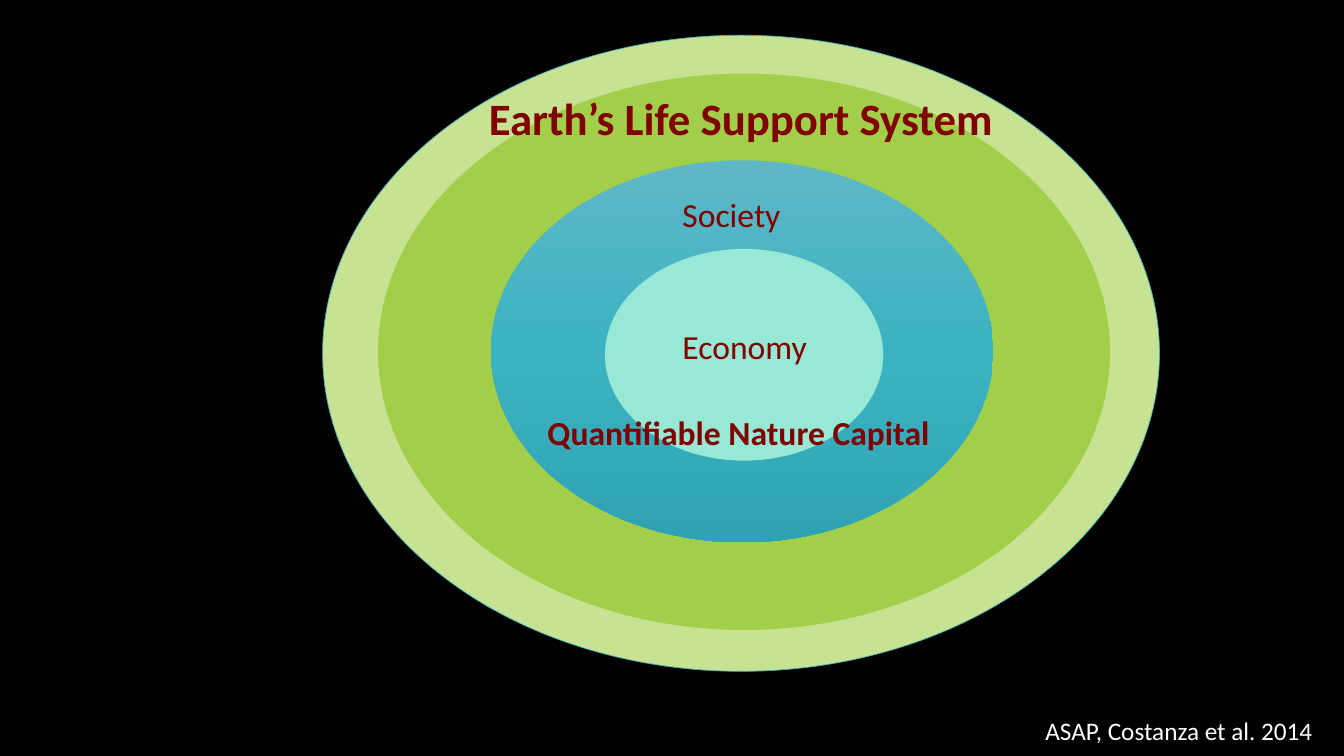
from copy import deepcopy

from pptx import Presentation
from pptx.dml.color import RGBColor
from pptx.enum import shapes, text
from pptx.util import Inches, Pt

BLACK = RGBColor(0x00, 0x00, 0x00)
WHITE = RGBColor(0xFF, 0xFF, 0xFF)
MAROON = RGBColor(0x80, 0x00, 0x00)
PALE_GREEN = RGBColor(0xC7, 0xE2, 0x92)
GREEN = RGBColor(0xA2, 0xCF, 0x49)
MINT = RGBColor(0x97, 0xE9, 0xD5)
TEAL = RGBColor(0x41, 0xAE, 0xBD)
SOCIETY_BLUES = [
    RGBColor(0x5F, 0xB7, 0xC5),
    RGBColor(0x3B, 0xB3, 0xC3),
    RGBColor(0x2F, 0xA3, 0xB3),
]


def add_ellipse(s, box, color):
    sp = s.shapes.add_shape(shapes.MSO_SHAPE.OVAL, *map(Inches, box))
    sp.shadow.inherit = False
    sp.fill.solid()
    sp.fill.fore_color.rgb = color
    sp.line.fill.background()
    return sp


def set_gradient(sp, colors):
    sp.fill.gradient()
    sp.fill.gradient_angle = 270
    stop_list = sp.element.xpath(".//a:gsLst")[0]
    while len(stop_list) < len(colors):
        stop_list.append(deepcopy(stop_list[0]))
    for i, (stop, color) in enumerate(zip(sp.fill.gradient_stops, colors)):
        stop.position = i / (len(colors) - 1)
        stop.color.rgb = color


def format_label(sp, words, size, color=MAROON, bold=False, centered=False):
    tf = sp.text_frame
    tf.text = words
    tf.word_wrap = True
    tf.auto_size = text.MSO_AUTO_SIZE.NONE
    tf.vertical_anchor = text.MSO_ANCHOR.TOP
    p = tf.paragraphs[0]
    p.alignment = text.PP_ALIGN.CENTER if centered else text.PP_ALIGN.LEFT
    p.font.name = "Calibri"
    p.font.size = Pt(size)
    p.font.bold = bold
    p.font.color.rgb = color


def add_label(s, box, words, size, **style):
    format_label(s.shapes.add_textbox(*map(Inches, box)), words, size, **style)


def place_title(s, box, words, size):
    title = s.shapes.title
    title.left, title.top, title.width, title.height = map(Inches, box)
    format_label(title, words, size, bold=True, centered=True)
    s.shapes.element.append(title.element)


def main():
    prs = Presentation()
    prs.slide_width, prs.slide_height = Inches(13.33), Inches(7.5)
    s = prs.slides.add_slide(prs.slide_layouts[5])
    s.background.fill.solid()
    s.background.fill.fore_color.rgb = BLACK

    outer = add_ellipse(s, (3.2, 0.35, 8.3, 6.31), PALE_GREEN)
    outer.line.color.rgb = TEAL
    outer.line.width = Pt(0.5)
    add_ellipse(s, (3.75, 0.73, 7.26, 5.52), GREEN)
    society = add_ellipse(s, (4.87, 1.59, 4.98, 3.79), SOCIETY_BLUES[0])
    set_gradient(society, SOCIETY_BLUES)
    add_ellipse(s, (6, 2.47, 2.76, 2.1), MINT)

    place_title(s, (4.2, 0.85, 6.3, 3.14), "Earth’s Life Support System", 32)
    add_label(s, (5.19, 4.04, 4.27, 1.71), "Quantifiable Nature Capital", 24,
              bold=True, centered=True)
    add_label(s, (6.67, 1.87, 1.24, 0.5), "Society", 24)
    add_label(s, (6.67, 3.18, 1.51, 0.5), "Economy", 24)
    add_label(s, (10.27, 7.05, 2.96, 0.4), "ASAP, Costanza et al. 2014", 18,
              color=WHITE)
    prs.save("out.pptx")


if __name__ == "__main__":
    main()
